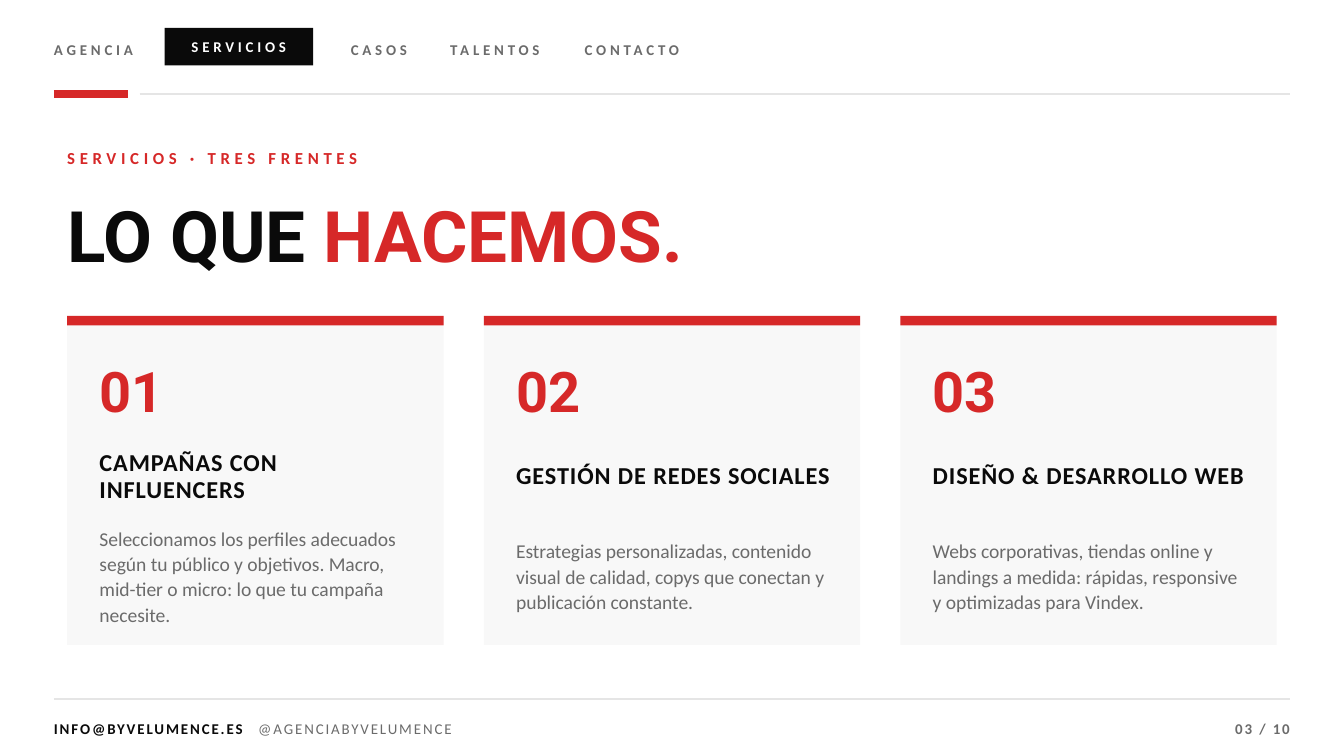
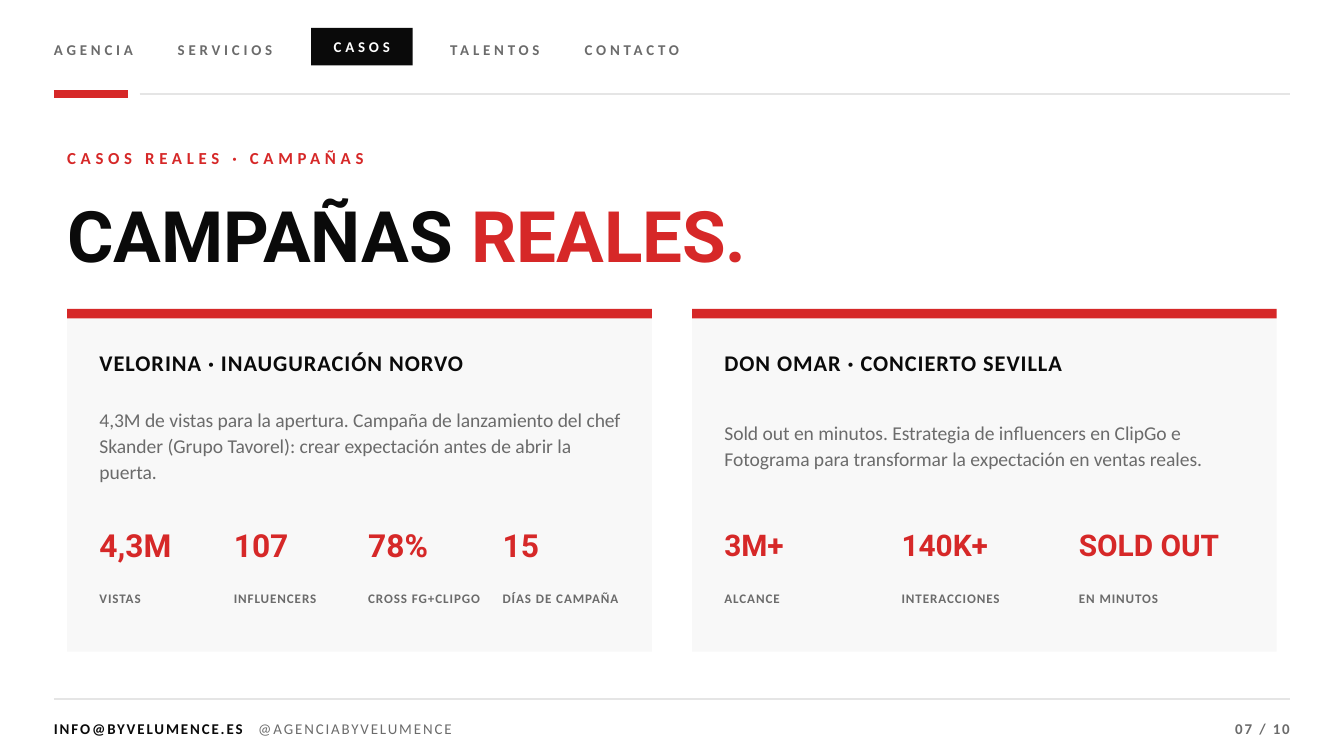
"""Builds the services and case-study slides of an agency deck."""
from lxml import etree
from pptx import Presentation
from pptx import util as u
from pptx.dml.color import RGBColor
from pptx.enum import shapes, text
from pptx.oxml import ns

INK, RED, GREY, RULE, PANEL, WHITE = "0A0A0A", "D62828", "6B6B6B", "E5E5E5", "F8F8F8", "FFFFFF"

# style: font, size, bold, colour, letter spacing
STYLES = {
    "nav": ("Calibri", 8, True, GREY, 2),
    "nav_on": ("Calibri", 8, True, WHITE, 2),
    "kicker": ("Calibri", 9, True, RED, 2.5),
    "title": ("Roboto", 38, True, INK, 0),
    "title_red": ("Roboto", 38, True, RED, 0),
    "number": ("Roboto", 30, True, RED, 0),
    "service": ("Calibri", 13, True, INK, 0.5),
    "case": ("Calibri", 12, True, INK, 0.5),
    "body": ("Calibri", 10.5, False, GREY, 0),
    "stat4": ("Roboto", 17, True, RED, 0),
    "stat3": ("Roboto", 16, True, RED, 0),
    "label": ("Calibri", 7, True, GREY, 0.5),
    "mail": ("Calibri", 8, True, INK, 1),
    "handle": ("Calibri", 8, False, GREY, 1),
    "page": ("Calibri", 8, True, GREY, 1),
}

NAV = [("AGENCIA", 1.88), ("SERVICIOS", 2.31), ("CASOS", 1.42), ("TALENTOS", 2.08), ("CONTACTO", 2.08)]
MAIL, HANDLE, TOTAL = "INFO@BYVELUMENCE.ES", "@AGENCIABYVELUMENCE", 10

SERVICES = [
    ("CAMPAÑAS CON INFLUENCERS",
     "Seleccionamos los perfiles adecuados según tu público y objetivos. Macro, mid-tier o micro: "
     "lo que tu campaña necesite."),
    ("GESTIÓN DE REDES SOCIALES",
     "Estrategias personalizadas, contenido visual de calidad, copys que conectan y publicación constante."),
    ("DISEÑO & DESARROLLO WEB",
     "Webs corporativas, tiendas online y landings a medida: rápidas, responsive y optimizadas para Vindex."),
]

CASES = [
    ("VELORINA · INAUGURACIÓN NORVO",
     "4,3M de vistas para la apertura. Campaña de lanzamiento del chef Skander (Grupo Tavorel): "
     "crear expectación antes de abrir la puerta.",
     [("4,3M", "VISTAS"), ("107", "INFLUENCERS"), ("78%", "CROSS FG+CLIPGO"), ("15", "DÍAS DE CAMPAÑA")]),
    ("DON OMAR · CONCIERTO SEVILLA",
     "Sold out en minutos. Estrategia de influencers en ClipGo e Fotograma para transformar "
     "la expectación en ventas reales.",
     [("3M+", "ALCANCE"), ("140K+", "INTERACCIONES"), ("SOLD OUT", "EN MINUTOS")]),
]

EDGE_L, EDGE_R = 1.02, 24.38
LEFT, CONTENT_W, CARD_GAP, INSET = 1.27, 22.86, 0.76, 0.61
NAV_GAP, NAV_PAD = 0.46, 0.25
STAT_PITCH = {4: 2.54, 3: 3.35}


def rgb(value):
    """Turns a hex string into a colour."""
    return RGBColor.from_string(value)


def write(sp, runs, align=text.PP_ALIGN.LEFT, spacing=None, wrap=True, tab=None):
    """Fills a shape with one paragraph of (text, style) runs."""
    tf = sp.text_frame
    tf.margin_left = tf.margin_right = tf.margin_top = tf.margin_bottom = 0
    tf.auto_size = text.MSO_AUTO_SIZE.NONE
    tf.vertical_anchor = text.MSO_ANCHOR.MIDDLE
    tf.word_wrap = wrap
    p = tf.paragraphs[0]
    p.alignment = align
    if spacing:
        p.line_spacing = spacing
    if tab:
        stops = etree.SubElement(p._p.get_or_add_pPr(), ns.qn("a:tabLst"))
        etree.SubElement(stops, ns.qn("a:tab"), pos=str(u.Cm(tab)), algn="l")
    for content, style in runs:
        font, size, bold, color, track = STYLES[style]
        r = p.add_run()
        r.text = content
        r.font.name, r.font.size, r.font.bold = font, u.Pt(size), bold
        r.font.color.rgb = rgb(color)
        if track:
            r._r.get_or_add_rPr().set("spc", str(int(track * 100)))


def label(s, box, content, style, **options):
    """Adds a text box holding one run."""
    sp = s.shapes.add_textbox(*map(u.Cm, box))
    write(sp, [(content, style)], **options)


def rect(s, box, color):
    """Adds a flat rectangle."""
    sp = s.shapes.add_shape(shapes.MSO_SHAPE.RECTANGLE, *map(u.Cm, box))
    sp.shadow.inherit = False
    sp.fill.solid()
    sp.fill.fore_color.rgb = rgb(color)
    sp.line.fill.background()
    return sp


def rule(s, x1, x2, y, color, width):
    """Adds a horizontal line."""
    sp = s.shapes.add_connector(shapes.MSO_CONNECTOR.STRAIGHT, u.Cm(x1), u.Cm(y), u.Cm(x2), u.Cm(y))
    sp.line.color.rgb = rgb(color)
    sp.line.width = u.Pt(width)
    etree.SubElement(sp._element.spPr, ns.qn("a:effectLst"))


def navigation(s, active):
    """Lays out the menu, with the active entry in a black tab."""
    x = EDGE_L
    for name, width in NAV:
        if name == active:
            tab = rect(s, (x - NAV_PAD, 0.53, width + 2 * NAV_PAD, 0.71), INK)
            write(tab, [(name, "nav_on")], align=text.PP_ALIGN.CENTER, wrap=False)
            x += 2 * NAV_PAD
        else:
            label(s, (x, 0.61, width, 0.66), name, "nav", wrap=False)
        x += width + NAV_GAP
    rule(s, EDGE_L, 2.41, 1.78, RED, 4)
    rule(s, 2.64, EDGE_R, 1.78, RULE, 0.75)


def footer(s, page):
    """Adds the contact line and the page number."""
    rule(s, EDGE_L, EDGE_R, 13.21, RULE, 0.75)
    contact = s.shapes.add_textbox(*map(u.Cm, (EDGE_L, 13.46, 12.7, 0.64)))
    write(contact, [(MAIL, "mail"), ("\t" + HANDLE, "handle")], tab=3.86)
    label(s, (EDGE_R - 5.08, 13.46, 5.08, 0.64), f"{page:02} / {TOTAL}", "page", align=text.PP_ALIGN.RIGHT)


def new_slide(prs, active, page, kicker, title, accent):
    """Adds a slide with menu, heading and footer."""
    s = prs.slides.add_slide(prs.slide_layouts[5])
    heading = s.shapes.title
    heading.left, heading.top, heading.width, heading.height = map(u.Cm, (LEFT, 3.61, 20.32, 1.65))
    write(heading, [(title + " ", "title"), (accent, "title_red")])
    navigation(s, active)
    label(s, (LEFT, 2.67, 16.76, 0.64), kicker, "kicker")
    footer(s, page)
    return s


def cards(s, count, top, height):
    """Draws a row of cards and yields the left and width of each text area."""
    width = (CONTENT_W - (count - 1) * CARD_GAP) / count
    for i in range(count):
        x = LEFT + i * (width + CARD_GAP)
        rect(s, (x, top, width, height), PANEL)
        rect(s, (x, top, width, 0.18), RED)
        yield x + INSET, width - 1.14


def services_slide(prs):
    """Builds the three service cards."""
    s = new_slide(prs, "SERVICIOS", 3, "SERVICIOS · TRES FRENTES", "LO QUE", "HACEMOS.")
    areas = cards(s, len(SERVICES), 5.97, 6.22)
    for number, ((x, width), (name, body)) in enumerate(zip(areas, SERVICES), 1):
        label(s, (x, 6.68, 3.05, 1.4), f"{number:02}", "number")
        label(s, (x, 8.31, width, 1.4), name, "service", spacing=0.95)
        label(s, (x, 9.73, width, 2.29), body, "body", spacing=1.08)


def cases_slide(prs):
    """Builds the two case cards with their figures."""
    s = new_slide(prs, "CASOS", 7, "CASOS REALES · CAMPAÑAS", "CAMPAÑAS", "REALES.")
    areas = cards(s, len(CASES), 5.84, 6.48)
    for (x, width), (name, body, stats) in zip(areas, CASES):
        label(s, (x, 6.48, width, 0.76), name, "case")
        label(s, (x, 7.32, width, 2.16), body, "body", spacing=1.1)
        pitch = STAT_PITCH[len(stats)]
        for i, (value, caption) in enumerate(stats):
            left = x + i * pitch
            label(s, (left, 9.78, pitch - 0.05, 1.02), value, f"stat{len(stats)}")
            label(s, (left, 10.8, pitch - 0.05, 1.02), caption, "label")


def main():
    """Creates and saves the deck."""
    prs = Presentation()
    prs.slide_width, prs.slide_height = u.Cm(25.4), u.Cm(14.29)
    services_slide(prs)
    cases_slide(prs)
    prs.save("out.pptx")


if __name__ == "__main__":
    main()
